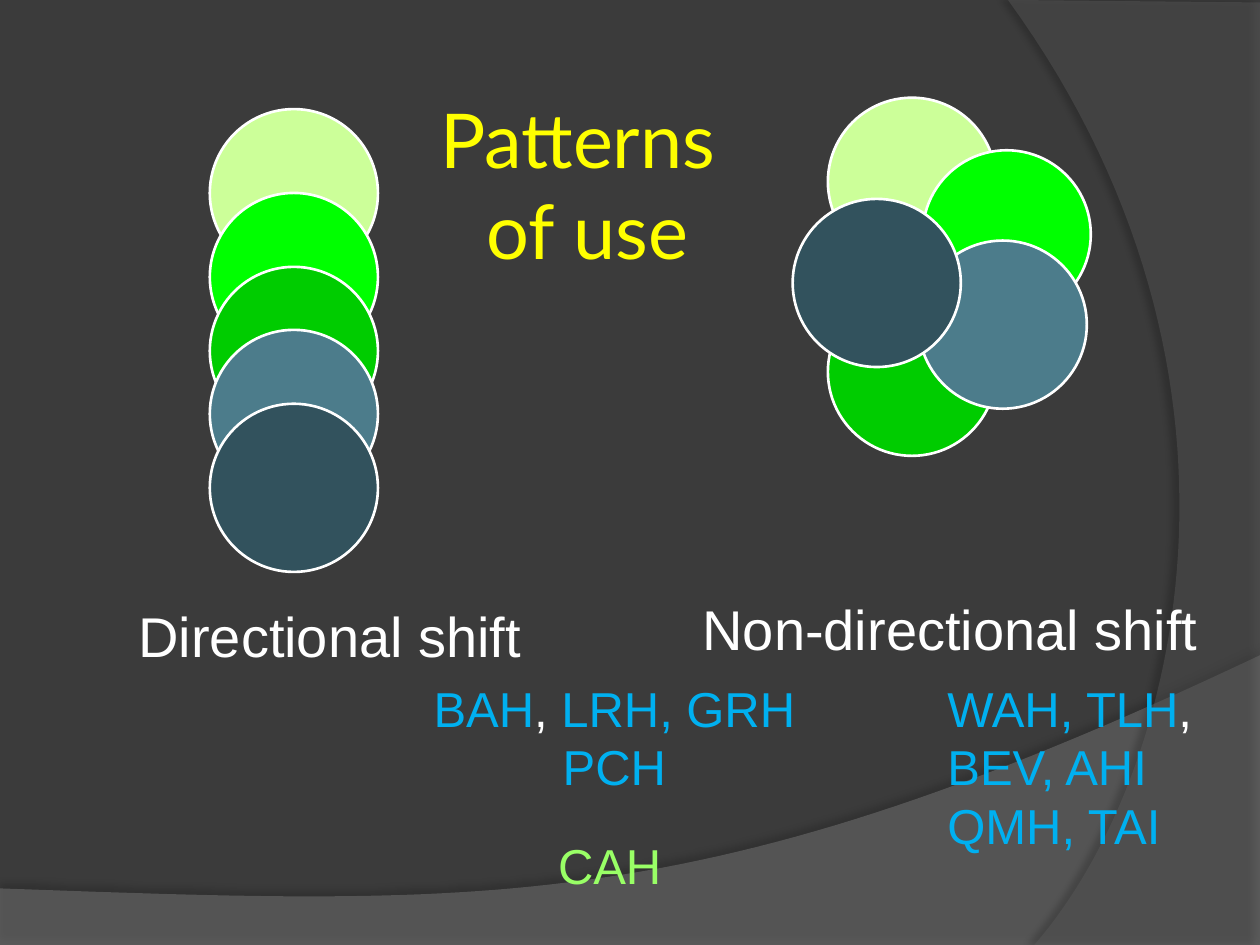
from dataclasses import dataclass

import pptx
import pptx.dml.color
import pptx.enum.shapes
import pptx.enum.text
import pptx.oxml
import pptx.oxml.ns
import pptx.util

Cm = pptx.util.Cm
Align = pptx.enum.text.PP_ALIGN
Anchor = pptx.enum.text.MSO_ANCHOR
Point = tuple[float, float]

COLOURS = {
    "background": "3B3B3B",
    "lower wave": "7F7F7F",
    "right wave": "5E5E5E",
    "title": "FFFF00",
    "white": "FFFFFF",
    "blue": "00B0F0",
    "light green": "99FF66",
    "stage 1": "CCFF99",
    "stage 2": "00FF00",
    "stage 3": "00CC00",
    "stage 4": "4C7C8B",
    "stage 5": "32525D",
}
WIDTH, HEIGHT = 25.4, 19.05
DIAMETER = 3.39


@dataclass
class Wave:
    colour: str
    opacity: int
    corners: list[Point]
    controls: list[Point]
    shadow_opacity: int
    shadow_angle: int


@dataclass
class Run:
    text: str
    colour: str


@dataclass
class Label:
    left: float
    top: float
    width: float
    height: float
    size: float
    lines: list[list[Run]]
    alignment: Align = Align.LEFT
    font: str = "Arial"
    anchor: Anchor = Anchor.TOP
    inset: float = 0.25


WAVES = [
    Wave("lower wave", 45,
         [(0, 17.91), (0, HEIGHT), (WIDTH, HEIGHT), (WIDTH, 13.21)],
         [(14.2, 18.52), (9.93, 18.26), (0, 17.91)], 35, 270),
    Wave("right wave", 40,
         [(WIDTH, 0.05), (WIDTH, HEIGHT), (20.85, HEIGHT)],
         [(23.75, 15.72), (25.86, 7.62), (20.32, 0)], 45, 180),
]

DIRECTIONAL = [(4.23, top) for top in (2.2, 3.89, 5.38, 6.65, 8.14)]
NON_DIRECTIONAL = [(16.69, 1.97), (18.6, 3.03), (16.69, 5.8), (18.52, 4.85), (15.98, 4.01)]

TITLE = Label(1.47, 2.11, 20.75, 3.18, 43.2,
              [[Run("Patterns \vof use", "title")]],
              Align.CENTER, "Lato", Anchor.MIDDLE, 0.13)
LABELS = [
    Label(2.54, 11.99, 10.16, 1.63, 32, [[Run("Directional shift", "white")]]),
    Label(13.34, 11.86, 11.63, 1.63, 32, [[Run("Non-directional shift", "white")]], Align.CENTER),
    Label(18.85, 13.54, 5.92, 3.84, 28,
          [[Run("WAH, TLH", "blue"), Run(", ", "white"), Run("BEV, AHI QMH, TAI", "blue")]]),
    Label(7.62, 13.54, 9.53, 2.64, 28,
          [[Run("BAH", "blue"), Run(", ", "white"), Run("LRH, GRH", "blue")],
           [Run("PCH", "blue")]], Align.CENTER),
    Label(11, 16.71, 3.38, 1.45, 28, [[Run("CAH", "light green")]]),
]


def rgb(name: str) -> pptx.dml.color.RGBColor:
    return pptx.dml.color.RGBColor.from_string(COLOURS[name])


def curve(start: Point, controls: list[Point], steps: int = 60) -> list[Point]:
    points = [start, *controls]
    result = []
    for step in range(1, steps + 1):
        t = step / steps
        weights = ((1 - t) ** 3, 3 * t * (1 - t) ** 2, 3 * t ** 2 * (1 - t), t ** 3)
        result.append(tuple(sum(w * p[axis] for w, p in zip(weights, points)) for axis in (0, 1)))
    return result


def draw_wave(slide: pptx.slide.Slide, wave: Wave) -> None:
    outline = wave.corners + curve(wave.corners[-1], wave.controls)
    points = [(Cm(x), Cm(y)) for x, y in outline]
    builder = slide.shapes.build_freeform(*points[0])
    builder.add_line_segments(points[1:], close=True)
    shape = builder.convert_to_shape()
    shape.fill.solid()
    shape.fill.fore_color.rgb = rgb(wave.colour)
    shape.line.fill.background()
    shape.shadow.inherit = False
    properties = shape._element.spPr
    colour = properties.find(".//" + pptx.oxml.ns.qn("a:srgbClr"))
    colour.append(pptx.oxml.parse_xml(
        f'<a:alpha {pptx.oxml.ns.nsdecls("a")} val="{wave.opacity * 1000}"/>'))
    effects = properties.find(pptx.oxml.ns.qn("a:effectLst"))
    effects.append(pptx.oxml.parse_xml(
        f'<a:outerShdw {pptx.oxml.ns.nsdecls("a")} blurRad="{pptx.util.Pt(4)}" '
        f'dist="{pptx.util.Pt(4)}" dir="{wave.shadow_angle * 60000}" rotWithShape="0">'
        f'<a:srgbClr val="000000"><a:alpha val="{wave.shadow_opacity * 1000}"/></a:srgbClr>'
        '</a:outerShdw>'))


def draw_circles(slide: pptx.slide.Slide, positions: list[Point]) -> None:
    group = slide.shapes.add_group_shape()
    for stage, (left, top) in enumerate(positions, start=1):
        circle = group.shapes.add_shape(
            pptx.enum.shapes.MSO_SHAPE.OVAL, Cm(left), Cm(top), Cm(DIAMETER), Cm(DIAMETER))
        circle.fill.solid()
        circle.fill.fore_color.rgb = rgb(f"stage {stage}")
        circle.line.color.rgb = rgb("white")
        circle.line.width = pptx.util.Pt(1.5)
        circle.shadow.inherit = False


def draw_label(slide: pptx.slide.Slide, label: Label) -> None:
    box = slide.shapes.add_textbox(
        Cm(label.left), Cm(label.top), Cm(label.width), Cm(label.height))
    frame = box.text_frame
    frame.word_wrap = True
    frame.vertical_anchor = label.anchor
    frame.margin_left = frame.margin_right = Cm(label.inset)
    frame.margin_top = frame.margin_bottom = Cm(0.13)
    for index, line in enumerate(label.lines):
        paragraph = frame.add_paragraph() if index else frame.paragraphs[0]
        paragraph.alignment = label.alignment
        for item in line:
            for position, text in enumerate(item.text.split("\v")):
                if position:
                    paragraph.add_line_break()
                run = paragraph.add_run()
                run.text = text
                run.font.name = label.font
                run.font.size = pptx.util.Pt(label.size)
                run.font.color.rgb = rgb(item.colour)


def main() -> None:
    presentation = pptx.Presentation()
    presentation.slide_width = Cm(WIDTH)
    presentation.slide_height = Cm(HEIGHT)
    slide = presentation.slides.add_slide(presentation.slide_layouts[6])
    slide.background.fill.solid()
    slide.background.fill.fore_color.rgb = rgb("background")
    for wave in WAVES:
        draw_wave(slide, wave)
    draw_label(slide, TITLE)
    for positions in (DIRECTIONAL, NON_DIRECTIONAL):
        draw_circles(slide, positions)
    for label in LABELS:
        draw_label(slide, label)
    presentation.save("out.pptx")


if __name__ == "__main__":
    main()
